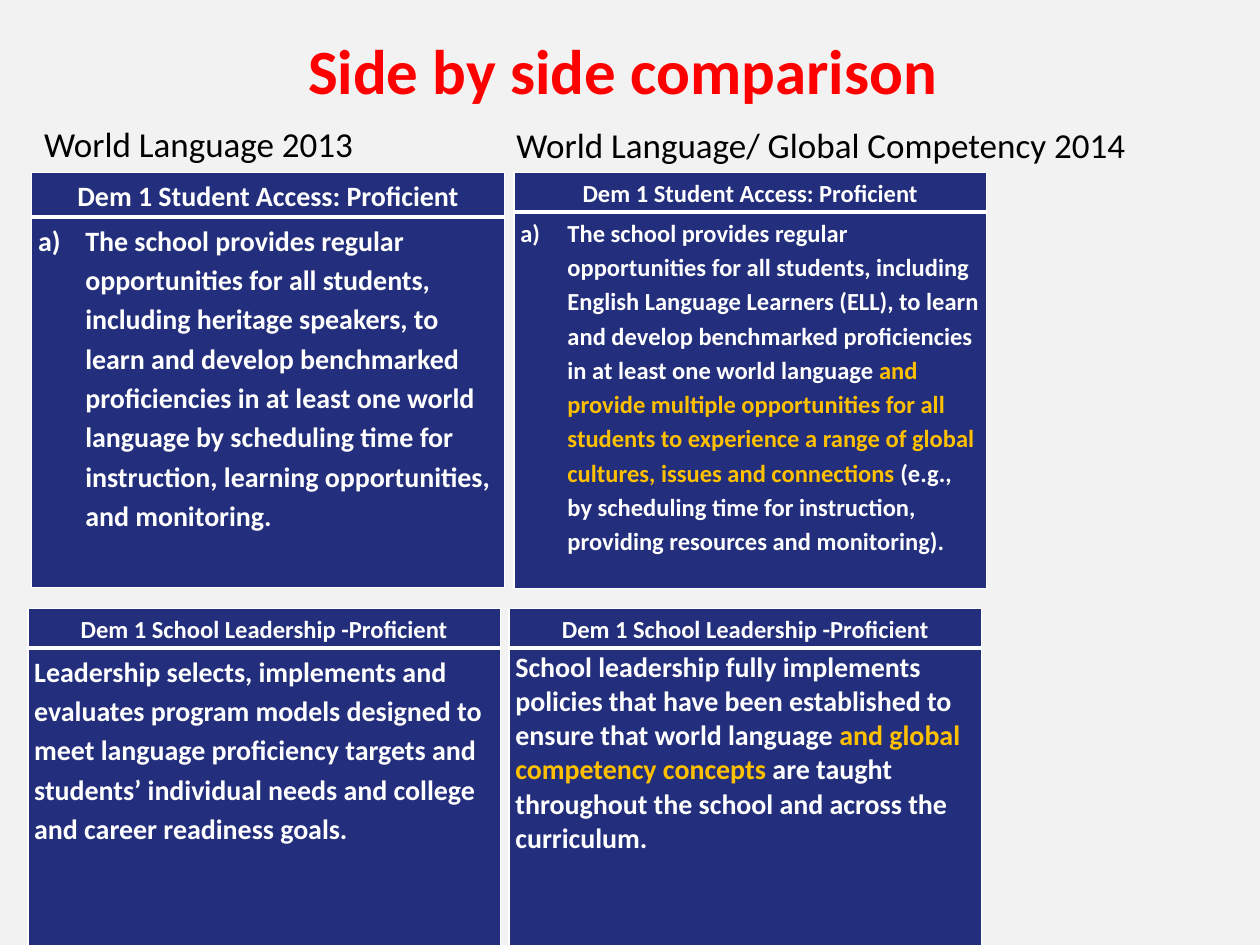
from lxml import etree
from pptx import Presentation
from pptx.dml.color import RGBColor
from pptx.enum.text import MSO_ANCHOR, PP_ALIGN
from pptx.oxml.ns import qn
from pptx.util import Cm, Pt

MID = MSO_ANCHOR.MIDDLE
TOP = MSO_ANCHOR.TOP
LEFT = PP_ALIGN.LEFT
CENTER = PP_ALIGN.CENTER

HEX = {"back": "F2F2F2", "navy": "232F7C", "white": "FFFFFF",
       "gold": "FFC000", "red": "FF0000", "black": "000000"}


class Deck:
    font = "Calibri"
    wide = 9.53

    def __init__(self):
        self.show = Presentation()
        self.show.slide_width = Cm(25.4)
        self.show.slide_height = Cm(19.05)
        self.slide = self.show.slides.add_slide(self.show.slide_layouts[6])
        fill = self.slide.background.fill
        fill.solid()
        fill.fore_color.rgb = self.tint("back")

    def tint(self, name):
        return RGBColor.from_string(HEX[name])

    def add_text(self, para, runs, size, bold, align=LEFT, space=None):
        para.alignment = align
        if space:
            para.line_spacing = space
        for text, color in runs:
            run = para.add_run()
            run.text = text
            font = run.font
            font.name, font.size, font.bold = self.font, Pt(size), bold
            font.color.rgb = self.tint(color)

    def label(self, x, y, w, h, text, size, color="black", bold=False,
              align=LEFT, anchor=TOP, wrap=True):
        box = self.slide.shapes.add_textbox(Cm(x), Cm(y), Cm(w), Cm(h))
        frame = box.text_frame
        frame.word_wrap = wrap
        frame.vertical_anchor = anchor
        self.add_text(frame.paragraphs[0], [(text, color)], size, bold, align)

    def edge(self, cell, top, bottom):
        props = cell._tc.get_or_add_tcPr()
        for tag, width in (("lnL", 1), ("lnR", 1), ("lnT", top), ("lnB", bottom)):
            line = etree.SubElement(props, qn("a:" + tag), w=str(Pt(width)))
            fill = etree.SubElement(line, qn("a:solidFill"))
            etree.SubElement(fill, qn("a:srgbClr"), val=HEX["white"])

    def number(self, para):
        props = para._p.get_or_add_pPr()
        props.set("marL", str(Cm(0.95)))
        props.set("indent", str(Cm(-0.95)))
        etree.SubElement(props, qn("a:buFont"), typeface="+mj-lt")
        etree.SubElement(props, qn("a:buAutoNum"), type="alphaLcParenR")

    def panel(self, x, y, rows, head, runs, sizes, space=1.15, listed=False):
        frame = self.slide.shapes.add_table(
            2, 1, Cm(x), Cm(y), Cm(self.wide), Cm(sum(rows)))
        table = frame.table
        for row, high in zip(table.rows, rows):
            row.height = Cm(high)
        top, body = table.cell(0, 0), table.cell(1, 0)
        self.edge(top, 1, 3)
        self.edge(body, 3, 1)
        for cell in (top, body):
            cell.fill.solid()
            cell.fill.fore_color.rgb = self.tint("navy")
            cell.margin_left = cell.margin_right = Cm(0.13)
            cell.margin_top = cell.margin_bottom = Cm(0.05)
        self.add_text(top.text_frame.paragraphs[0], [(head, "white")],
                      sizes[0], True, CENTER, 1.15)
        para = body.text_frame.paragraphs[0]
        if listed:
            self.number(para)
        self.add_text(para, runs, sizes[1], True, LEFT, space)


def main():
    deck = Deck()
    access = "Dem 1 Student Access: Proficient"
    lead = "Dem 1 School Leadership -Proficient"

    deck.panel(0.64, 3.48, (0.86, 7.47), access, [
        ("The school provides regular opportunities for all students, "
         "including heritage speakers, to learn and develop benchmarked "
         "proficiencies in at least one world language by scheduling time "
         "for instruction, learning opportunities, and monitoring.", "white"),
    ], (16, 16), listed=True)
    deck.panel(10.36, 3.48, (0.66, 7.59), access, [
        ("The school provides regular opportunities for all students, "
         "including English Language Learners (ELL), to learn and develop "
         "benchmarked proficiencies in at least one world language ", "white"),
        ("and provide multiple opportunities for all students to experience "
         "a range of global cultures, issues and connections", "gold"),
        (" (e.g., by scheduling time for instruction, providing resources "
         "and monitoring).", "white"),
    ], (14, 14), listed=True)
    deck.panel(10.26, 12.27, (0.66, 6.12), lead, [
        ("School leadership fully implements policies that have been "
         "established to ensure that world language ", "white"),
        ("and global competency concepts", "gold"),
        (" are taught throughout the school and across the curriculum.",
         "white"),
    ], (14, 16), space=None)
    deck.panel(0.56, 12.27, (0.66, 6.12), lead, [
        ("Leadership selects, implements and evaluates program models "
         "designed to meet language proficiency targets and students’ "
         "individual needs and college and career readiness goals.", "white"),
    ], (14, 16))

    deck.label(0, 0.51, 25.4, 1.78, "Side by side comparison ", 36,
               "red", True, CENTER, MID)
    deck.label(0.64, 2.34, 8.46, 1.27, "World Language 2013", 20)
    deck.label(10.16, 2.36, 12.9, 1.12,
               "World Language/ Global Competency 2014", 20, wrap=False)
    deck.show.save("out.pptx")


if __name__ == "__main__":
    main()
